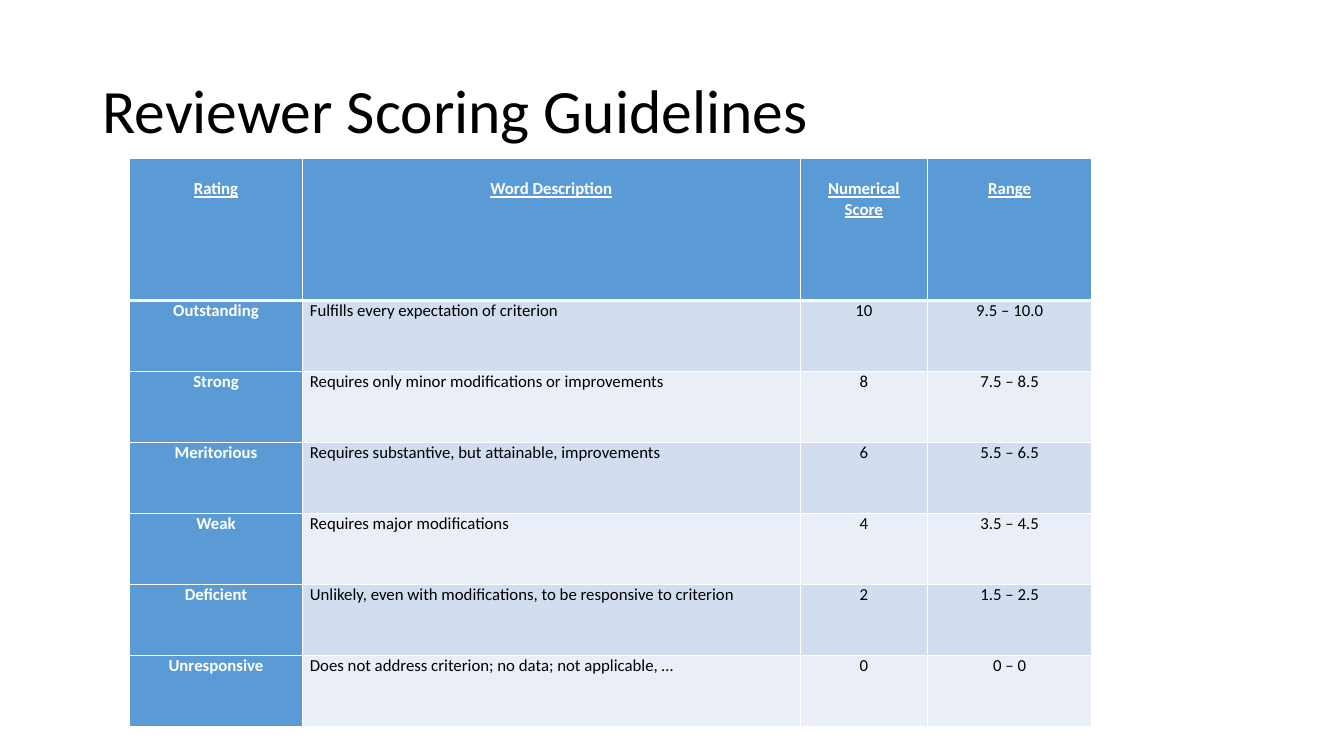
import pptx
import pptx.dml.color
import pptx.enum.text
import pptx.oxml
import pptx.oxml.ns
import pptx.util
from pptx.util import Cm

TITLE = "Reviewer Scoring Guidelines"
HEADS = ["Rating", "Word Description", "Numerical Score", "Range"]
RATINGS = [
    ("Outstanding", "Fulfills every expectation of criterion", "10", "9.5 – 10.0"),
    ("Strong", "Requires only minor modifications or improvements", "8", "7.5 – 8.5"),
    ("Meritorious", "Requires substantive, but attainable, improvements", "6", "5.5 – 6.5"),
    ("Weak", "Requires major modifications", "4", "3.5 – 4.5"),
    ("Deficient", "Unlikely, even with modifications, to be responsive to criterion", "2", "1.5 – 2.5"),
    ("Unresponsive", "Does not address criterion; no data; not applicable, …", "0", "0 – 0"),
]

WIDTHS = [4.35, 12.55, 3.2, 4.15]
HEAD_HIGH, ROW_HIGH = 3.57, 1.79
LEFT, TOP = 3.27, 4
LEAD = 0.51  # space above the heading text

THEME = {
    "font": "Calibri",
    "title": 44,
    "body": 12,
    "black": "000000",
    "white": "FFFFFF",
    "blue": "5B9BD5",
    "bands": ("D2DEEF", "EAEFF7"),
    "thin": 1,
    "thick": 3,
}
ALIGN = pptx.enum.text.PP_ALIGN
ANCHOR = pptx.enum.text.MSO_ANCHOR


def paint(color):
    return pptx.dml.color.RGBColor.from_string(color)


def apply(target, values):
    for name, value in values.items():
        setattr(target, name, value)


def write(para, text, size, color, **style):
    run = para.add_run()
    run.text = text
    apply(run.font, {"name": THEME["font"], "size": pptx.util.Pt(size), **style})
    run.font.color.rgb = paint(color)


def edge(cell, side, width):
    """Add one white border; call before the cell is filled."""
    space = pptx.oxml.ns.nsdecls("a")
    line = pptx.oxml.parse_xml(
        f'<a:ln{side} {space} w="{pptx.util.Pt(width)}"><a:solidFill>'
        f'<a:srgbClr val="{THEME["white"]}"/></a:solidFill></a:ln{side}>'
    )
    cell._tc.get_or_add_tcPr().append(line)


def draw_title(slide):
    box = slide.shapes.add_textbox(Cm(2.33), Cm(1.01), Cm(29.21), Cm(3.68))
    frame = box.text_frame
    apply(frame, {"word_wrap": True, "vertical_anchor": ANCHOR.MIDDLE})
    para = frame.paragraphs[0]
    para.line_spacing = 0.9
    write(para, TITLE, THEME["title"], THEME["black"])


def draw_cell(cell, text, row, col):
    head = row == 0
    strong = head or col == 0
    for side in "LRTB":
        heavy = (row, side) in ((0, "B"), (1, "T"))
        edge(cell, side, THEME["thick" if heavy else "thin"])
    cell.fill.solid()
    band = THEME["bands"][(row - 1) % 2]
    cell.fill.fore_color.rgb = paint(THEME["blue"] if strong else band)
    apply(cell, {
        "margin_left": Cm(0.19),
        "margin_right": Cm(0.19),
        "margin_top": Cm(LEAD if head else 0),
        "margin_bottom": 0,
        "vertical_anchor": ANCHOR.TOP,
    })
    para = cell.text_frame.paragraphs[0]
    para.alignment = ALIGN.LEFT if col == 1 and not head else ALIGN.CENTER
    write(para, text, THEME["body"], THEME["white" if strong else "black"],
          bold=strong, underline=head)


def draw_table(slide):
    rows = [HEADS, *RATINGS]
    highs = [HEAD_HIGH] + [ROW_HIGH] * len(RATINGS)
    frame = slide.shapes.add_table(
        len(rows), len(HEADS), Cm(LEFT), Cm(TOP), Cm(sum(WIDTHS)), Cm(sum(highs))
    )
    table = frame.table
    for column, width in zip(table.columns, WIDTHS):
        column.width = Cm(width)
    for row, (texts, high) in enumerate(zip(rows, highs)):
        table.rows[row].height = Cm(high)
        for col, text in enumerate(texts):
            draw_cell(table.cell(row, col), text, row, col)


def main():
    deck = pptx.Presentation()
    apply(deck, {"slide_width": Cm(33.87), "slide_height": Cm(19.05)})
    slide = deck.slides.add_slide(deck.slide_layouts[6])
    draw_title(slide)
    draw_table(slide)
    deck.save("out.pptx")


if __name__ == "__main__":
    main()
